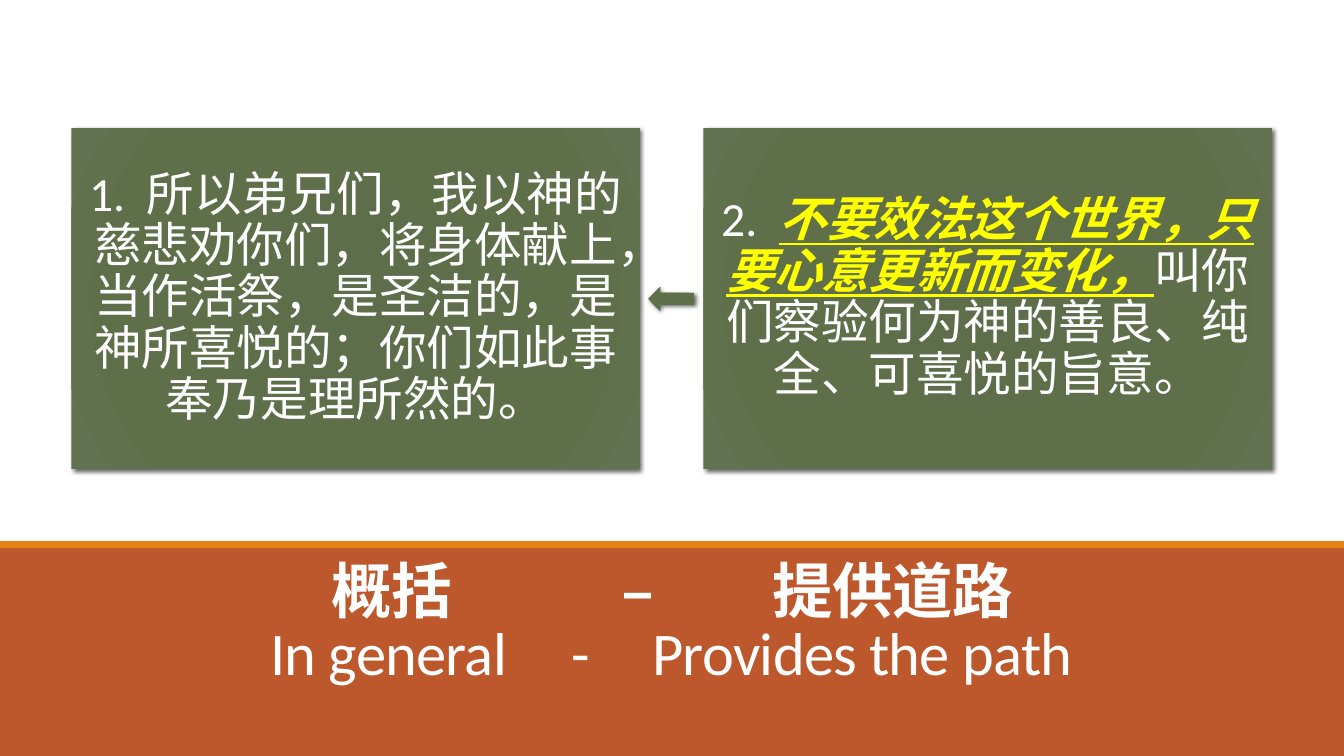
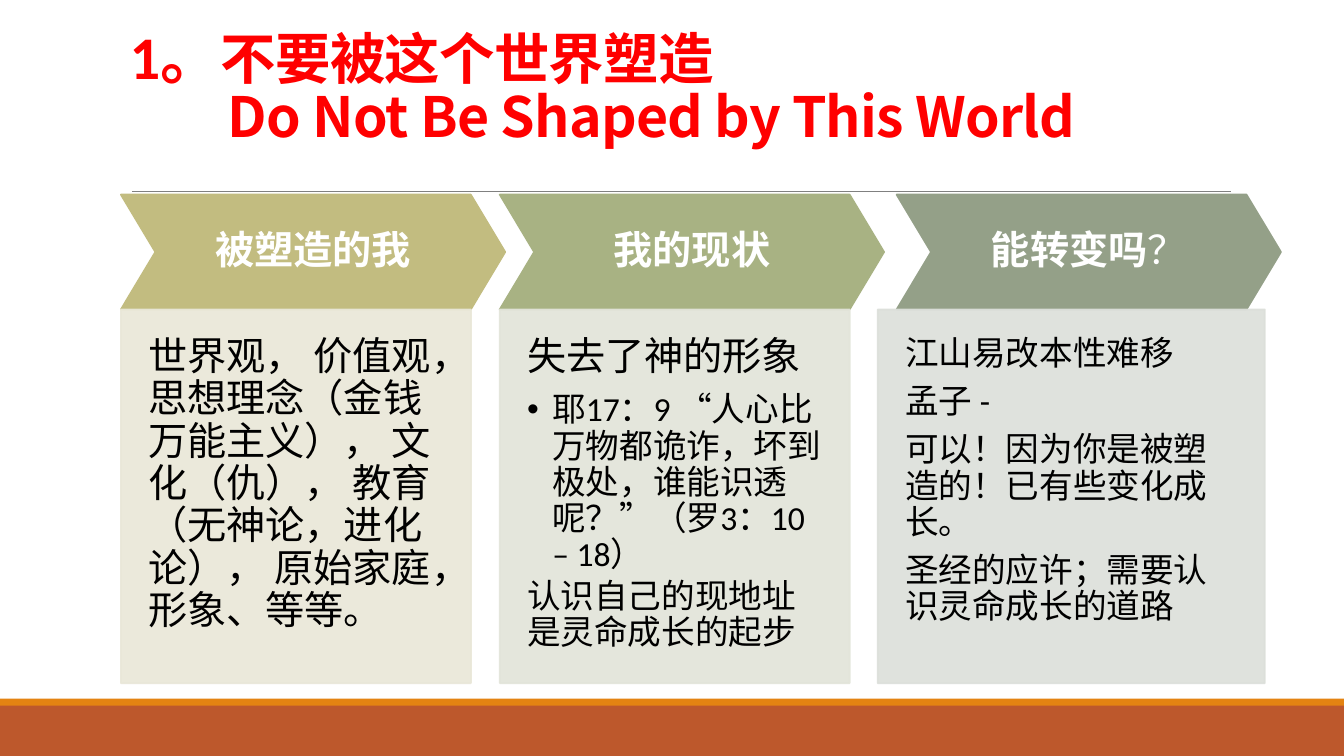
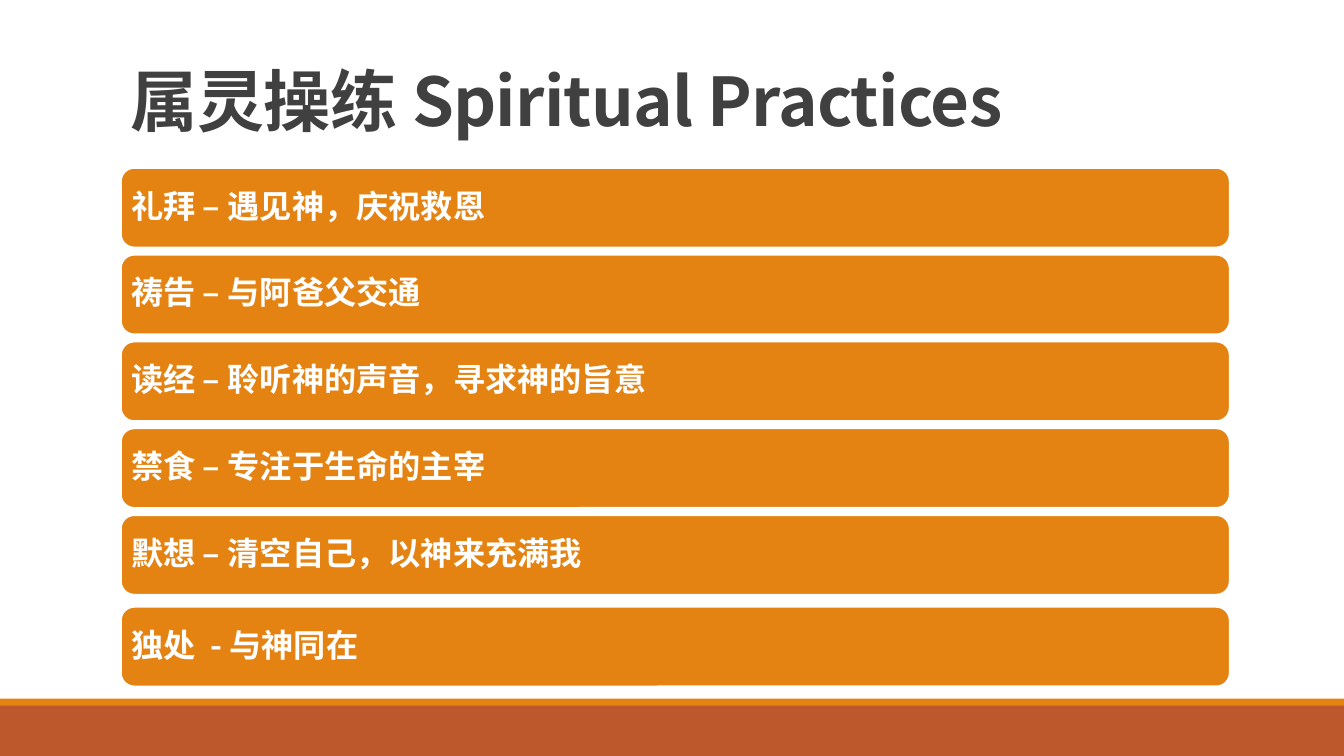
from lxml import etree
from pptx import Presentation
from pptx.dml.color import RGBColor
from pptx.enum.shapes import MSO_CONNECTOR, MSO_SHAPE
from pptx.enum.text import MSO_ANCHOR, PP_ALIGN
from pptx.oxml import parse_xml
from pptx.oxml.ns import nsdecls, qn
from pptx.util import Pt

RECT, ROUND = MSO_SHAPE.RECTANGLE, MSO_SHAPE.ROUNDED_RECTANGLE
CHEVRON, ARROW = MSO_SHAPE.CHEVRON, MSO_SHAPE.LEFT_ARROW
STRAIGHT = MSO_CONNECTOR.STRAIGHT
LEFT, CENTER = PP_ALIGN.LEFT, PP_ALIGN.CENTER
TOP, MIDDLE, BOTTOM = MSO_ANCHOR.TOP, MSO_ANCHOR.MIDDLE, MSO_ANCHOR.BOTTOM

LATIN, CJK = "Calibri", "Noto Sans CJK SC"
WHITE, BLACK, YELLOW, RED = "FFFFFF", "000000", "FFFF00", "FF0000"
RUST, ORANGE, GREY, DARK = "BD582C", "E48312", "808080", "404040"
MOSS = [(0, "5D6D48"), (34, "5E6D4A"), (70, "5F6F4A"), (100, "637250")]
WIDTH, HEIGHT = 960, 540


def rgb(value):
    return RGBColor.from_string(value)


def sub(parent, tag, **attrs):
    return etree.SubElement(parent, qn(tag), attrs)


def run(text, **style):
    return text, style


def para(*runs, **style):
    return runs, style


class Deck:
    """The presentation, its style and the slide being built."""

    def __init__(self):
        self.prs = Presentation()
        self.prs.slide_width, self.prs.slide_height = Pt(WIDTH), Pt(HEIGHT)
        self.slide = None

    def new_slide(self, band_top=499):
        self.slide = self.prs.slides.add_slide(self.prs.slide_layouts[6])
        self.shape(RECT, 0, band_top + 4, WIDTH, HEIGHT - band_top - 4, RUST)
        self.shape(RECT, 0, band_top, WIDTH, 5, ORANGE)

    def shape(self, kind, x, y, w, h, fill, line=None, alpha=None, adj=None):
        sp = self.slide.shapes.add_shape(kind, Pt(x), Pt(y), Pt(w), Pt(h))
        sp.shadow.inherit = False
        sp.fill.solid()
        sp.fill.fore_color.rgb = rgb(fill)
        if line:
            sp.line.color.rgb = rgb(line)
            sp.line.width = Pt(1.25)
        else:
            sp.line.fill.background()
        if alpha:
            for color in sp._element.spPr.iter(qn("a:srgbClr")):
                sub(color, "a:alpha", val=str(alpha * 1000))
        if adj:
            sp.adjustments[0] = adj
        return sp

    def moss_shape(self, kind, x, y, w, h):
        """A shape with the radial green fill and a soft shadow."""
        sp = self.shape(kind, x, y, w, h, MOSS[0][1])
        spPr = sp._element.spPr
        stops = "".join(f'<a:gs pos="{pos * 1000}"><a:srgbClr val="{color}"/></a:gs>'
                        for pos, color in MOSS)
        grad = parse_xml(
            f'<a:gradFill {nsdecls("a")} rotWithShape="1"><a:gsLst>{stops}</a:gsLst>'
            '<a:path path="circle"><a:fillToRect l="100000" t="100000" '
            'r="100000" b="100000"/></a:path></a:gradFill>')
        spPr.replace(spPr.find(qn("a:solidFill")), grad)
        shadow = sub(spPr.find(qn("a:effectLst")), "a:outerShdw", blurRad=str(Pt(3)),
                     dist=str(Pt(2)), dir=str(45 * 60000), rotWithShape="0")
        sub(sub(shadow, "a:srgbClr", val=BLACK), "a:alpha", val="60000")
        return sp

    def rule(self, x1, x2, y):
        line = self.slide.shapes.add_connector(STRAIGHT, Pt(x1), Pt(y), Pt(x2), Pt(y))
        line.line.color.rgb = rgb(GREY)
        line.line.width = Pt(0.5)
        sub(line._element.spPr, "a:effectLst")

    def title(self, x, y, h, paras, **style):
        sp = self.slide.shapes.add_textbox(Pt(x), Pt(y), Pt(792), Pt(h))
        self.text(sp, paras, anchor=BOTTOM, insets=(7.2, 3.6, 7.2, 3.6),
                  spacing=0.85, after=0, track=-0.5, **style)

    def text(self, sp, paras, anchor=MIDDLE, insets=(7, 7, 7, 7), **style):
        tf = sp.text_frame
        tf.word_wrap = True
        tf.vertical_anchor = anchor
        (tf.margin_left, tf.margin_top,
         tf.margin_right, tf.margin_bottom) = map(Pt, insets)
        for i, (runs, own) in enumerate(paras):
            p = tf.paragraphs[0] if i == 0 else tf.add_paragraph()
            self.fill_paragraph(p, runs, {**style, **own})

    def fill_paragraph(self, p, runs, style):
        p.alignment = style.get("align", LEFT)
        p.line_spacing = style.get("spacing", 0.9)
        p.space_after = Pt(round(style["size"] * style.get("after", 0.35), 1))
        pPr = p._p.get_or_add_pPr()
        if "indent" in style:
            pPr.set("marL", str(Pt(style["indent"])))
        if "bullet" in style:
            pPr.set("indent", str(-Pt(style["indent"])))
            sub(pPr, "a:buFont", typeface="Arial")
            sub(pPr, "a:buChar", char=style["bullet"])
        if "tabs" in style:
            tabs = sub(pPr, "a:tabLst")
            for pos in style["tabs"]:
                sub(tabs, "a:tab", pos=str(Pt(pos)), algn="l")
        for words, own in runs:
            self.add_run(p, words, {**style, **own})

    def add_run(self, p, words, style):
        r = p.add_run()
        r.text = words
        font = r.font
        font.size = Pt(style["size"])
        font.bold = style.get("bold", False)
        font.italic = style.get("italic", False)
        font.underline = style.get("underline", False)
        font.color.rgb = rgb(style["color"])
        font.name = style.get("font", LATIN)
        rPr = r._r.get_or_add_rPr()
        sub(rPr, "a:ea", typeface=CJK)
        if "track" in style:
            rPr.set("spc", str(int(style["track"] * 100)))


def verses_slide(deck):
    deck.new_slide(band_top=386.5)
    deck.title(84, 413, 81.6, [
        para(run("\t概括\t–\t提供道路"), font=CJK, bold=True, tabs=(146, 353, 461)),
        para(run("\tIn general\t-\tProvides the path"), tabs=(102, 317, 375)),
    ], size=43.2, color=WHITE)
    verses = [
        para(run("1.  所以弟兄们，我以神的慈悲劝你们，将身体献上，当作活祭，是圣洁的，"
                 "是神所喜悦的；你们如此事奉乃是理所然的。")),
        para(run("2.  "),
             run("不要效法这个世界，只要心意更新而变化，",
                 color=YELLOW, bold=True, italic=True, underline=True),
             run("叫你们察验何为神的善良、纯全、可喜悦的旨意。")),
    ]
    for i, verse in enumerate(verses):
        sp = deck.moss_shape(RECT, 51 + 451.5 * i, 91.5, 406, 243.5)
        deck.text(sp, [verse], insets=(12, 12, 12, 12), align=CENTER,
                  size=34, color=WHITE)
    deck.moss_shape(ARROW, 463, 205, 33, 17)


def world_slide(deck):
    deck.new_slide()
    deck.rule(94.3, 879, 136.8)
    deck.title(85.5, 41, 68.5, [
        para(run("1。", size=43.2, font=LATIN), run("不要被这个世界塑造")),
        para(run("Do Not Be Shaped by This World"), indent=70),
    ], size=39.6, color=RED, font=CJK, bold=True)
    # chevron left, box left, box width, chevron colour, box colour, heading, body
    columns = [
        (86.4, 86.4, 250, "C2BC80", "E9E7D8", [run("被塑造的我")], [
            para(run("世界观， 价值观，思想理念（金钱万能主义）， 文化（仇）， "
                     "教育（无神论，进化论）， 原始家庭，形象、等等。"), size=28)]),
        (357, 357, 250, "A8B283", "E2E4D9", [run("我的现状")], [
            para(run("失去了神的形象"), size=28),
            para(run("耶17：9 “人心比万物都诡诈，坏到极处，谁能识透呢？”（罗3：10 – 18）"),
                 indent=18, bullet="•", after=0.15),
            para(run("认识自己的现地址是灵命成长的起步"))]),
        (640.5, 627, 276.5, "94A088", "DCDFDA",
         [run("能转变吗"), run("？", bold=False)], [
            para(run("江山易改本性难移")),
            para(run("孟子 -")),
            para(run("可以！因为你是被塑造的！已有些变化成长。")),
            para(run("圣经的应许；需要认识灵命成长的道路"))]),
    ]
    for head_x, box_x, box_w, dark, pale, heading, body in columns:
        head = deck.shape(CHEVRON, head_x, 139, 274.5, 82, dark, line=dark, adj=0.3)
        deck.text(head, [para(*heading)], insets=(10, 10, 10, 10), align=CENTER,
                  size=28, color=WHITE, bold=True)
        box = deck.shape(RECT, box_x, 221, box_w, 267, pale, line=pale, alpha=90)
        deck.text(box, body, anchor=TOP, insets=(19.5, 19.5, 19.5, 39.5),
                  size=24, color=BLACK)


def practices_slide(deck):
    deck.new_slide()
    deck.title(86.4, 22.3, 81.4, [para(run("属灵操练 Spiritual Practices"))],
               size=48, color=DARK, font=CJK, bold=True)
    practices = [
        "礼拜 – 遇见神，庆祝救恩",
        "祷告 – 与阿爸父交通",
        "读经 – 聆听神的声音，寻求神的旨意",
        "禁食 – 专注于生命的主宰",
        "默想 – 清空自己，以神来充满我",
        "独处  - 与神同在",
    ]
    tops = [120 + 62 * i for i in range(5)] + [433.5]
    for top, practice in zip(tops, practices):
        bar = deck.shape(ROUND, 86.4, top, 792, 56.8, ORANGE, line=WHITE)
        deck.text(bar, [para(run(practice))], insets=(4.5, 4.5, 4.5, 4.5),
                  size=23, color=WHITE, font=CJK, bold=True)


def main():
    deck = Deck()
    verses_slide(deck)
    world_slide(deck)
    practices_slide(deck)
    deck.prs.save("out.pptx")


if __name__ == "__main__":
    main()
